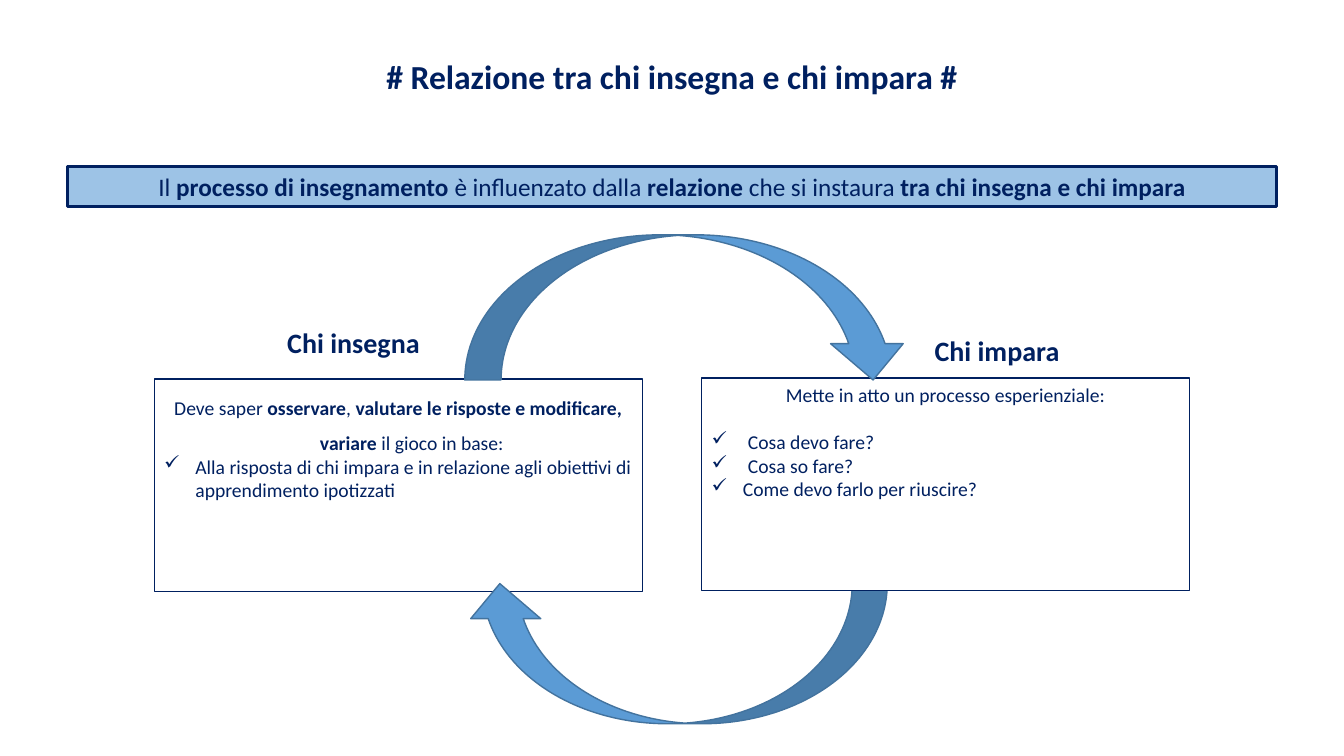
import pptx
import pptx.dml.color
import pptx.enum.shapes
import pptx.enum.text
import pptx.oxml.ns
import pptx.util
from lxml import etree

Inches = pptx.util.Inches
Pt = pptx.util.Pt
RGBColor = pptx.dml.color.RGBColor
Shape = pptx.enum.shapes.MSO_SHAPE
Align = pptx.enum.text.PP_ALIGN

NAVY = RGBColor(0x00, 0x20, 0x60)
WHITE = RGBColor(0xFF, 0xFF, 0xFF)
BAR_BLUE = RGBColor(0x9D, 0xC3, 0xE6)
ARROW_BLUE = RGBColor(0x5B, 0x9B, 0xD5)
ARROW_EDGE = RGBColor(0x43, 0x73, 0x9E)


def add_figure(slide, preset, place, fill, edge, edge_width):
    shape = slide.shapes.add_shape(preset, *map(Inches, place))
    shape.shadow.inherit = False
    shape.fill.solid()
    shape.fill.fore_color.rgb = fill
    shape.line.color.rgb = edge
    shape.line.width = Pt(edge_width)
    return shape


def add_panel(slide, place, fill, edge_width):
    panel = add_figure(slide, Shape.RECTANGLE, place, fill, NAVY, edge_width)
    panel.text_frame.word_wrap = True
    panel.text_frame.vertical_anchor = pptx.enum.text.MSO_ANCHOR.TOP
    return panel.text_frame


def hang(para, indent):
    properties = para._p.get_or_add_pPr()
    properties.set("marL", str(Inches(indent)))
    properties.set("indent", str(-Inches(indent)))
    return properties


def write(para, text, size, align=Align.LEFT, bold=None):
    """Fill a paragraph; without bold given, parts between asterisks are bold."""
    para.alignment = align
    para.font.name = "Calibri"
    para.font.size = Pt(size)
    para.font.color.rgb = NAVY
    para.font.bold = bold
    for position, part in enumerate(text.split("*")):
        if part:
            span = para.add_run()
            span.text = part
            if position % 2:
                span.font.bold = True


def add_check(frame, text, indent):
    para = frame.add_paragraph()
    bullet = etree.SubElement(hang(para, indent), pptx.oxml.ns.qn("a:buChar"))
    bullet.set("char", "✓")
    write(para, text, 14)
    return para


def add_heading(slide, place, text, size, align=Align.LEFT):
    box = slide.shapes.add_textbox(*map(Inches, place))
    box.text_frame.word_wrap = True
    para = box.text_frame.paragraphs[0]
    write(para, text, size, align, bold=True)
    return para


def add_cycle_arrow(slide, place, rotation=0):
    arrow = add_figure(slide, Shape.CURVED_DOWN_ARROW, place, ARROW_BLUE, ARROW_EDGE, 1)
    arrow.rotation = rotation


def add_teacher_panel(slide):
    frame = add_panel(slide, (1.53, 3.76, 4.84, 2.11), WHITE, 0.75)
    intro = frame.paragraphs[0]
    hang(intro, 0.27)
    write(intro, "Deve saper *osservare*, *valutare le risposte e modificare, "
          "variare *il gioco in base:", 14, Align.CENTER)
    intro.line_spacing = 1.5
    add_check(frame, "Alla risposta di chi impara e in relazione agli obiettivi "
              "di apprendimento ipotizzati", 0.31)


def add_learner_panel(slide):
    frame = add_panel(slide, (6.96, 3.75, 4.84, 2.11), WHITE, 0.75)
    write(frame.paragraphs[0], "Mette in atto un processo esperienziale:", 14, Align.CENTER)
    first = add_check(frame, "Cosa devo fare?", 0.36)
    first.space_before = Pt(17)
    add_check(frame, "Cosa so fare?", 0.36)
    add_check(frame, "Come devo farlo per riuscire?", 0.31)


def main():
    deck = pptx.Presentation()
    deck.slide_width = Inches(13.33)
    deck.slide_height = Inches(7.5)
    slide = deck.slides.add_slide(deck.slide_layouts[6])

    title = add_heading(slide, (0, 0.31, 13.33, 0.64),
                        "# Relazione tra chi insegna e chi impara #", 24, Align.CENTER)
    title.line_spacing = 1.5
    add_teacher_panel(slide)
    add_cycle_arrow(slide, (4.61, 5.79, 4.19, 1.39), rotation=180)
    bar = add_panel(slide, (0.67, 1.65, 11.99, 0.4), BAR_BLUE, 2.25)
    write(bar.paragraphs[0], "Il *processo di insegnamento *è influenzato dalla *relazione* "
          "che si instaura *tra chi insegna e chi impara*", 18, Align.CENTER)
    add_heading(slide, (2.75, 3.18, 1.71, 0.44), "Chi insegna", 20)
    add_heading(slide, (9.17, 3.26, 1.71, 0.44), "Chi impara", 20)
    add_learner_panel(slide)
    add_cycle_arrow(slide, (4.61, 2.33, 4.41, 1.44))

    deck.save("out.pptx")


if __name__ == "__main__":
    main()
